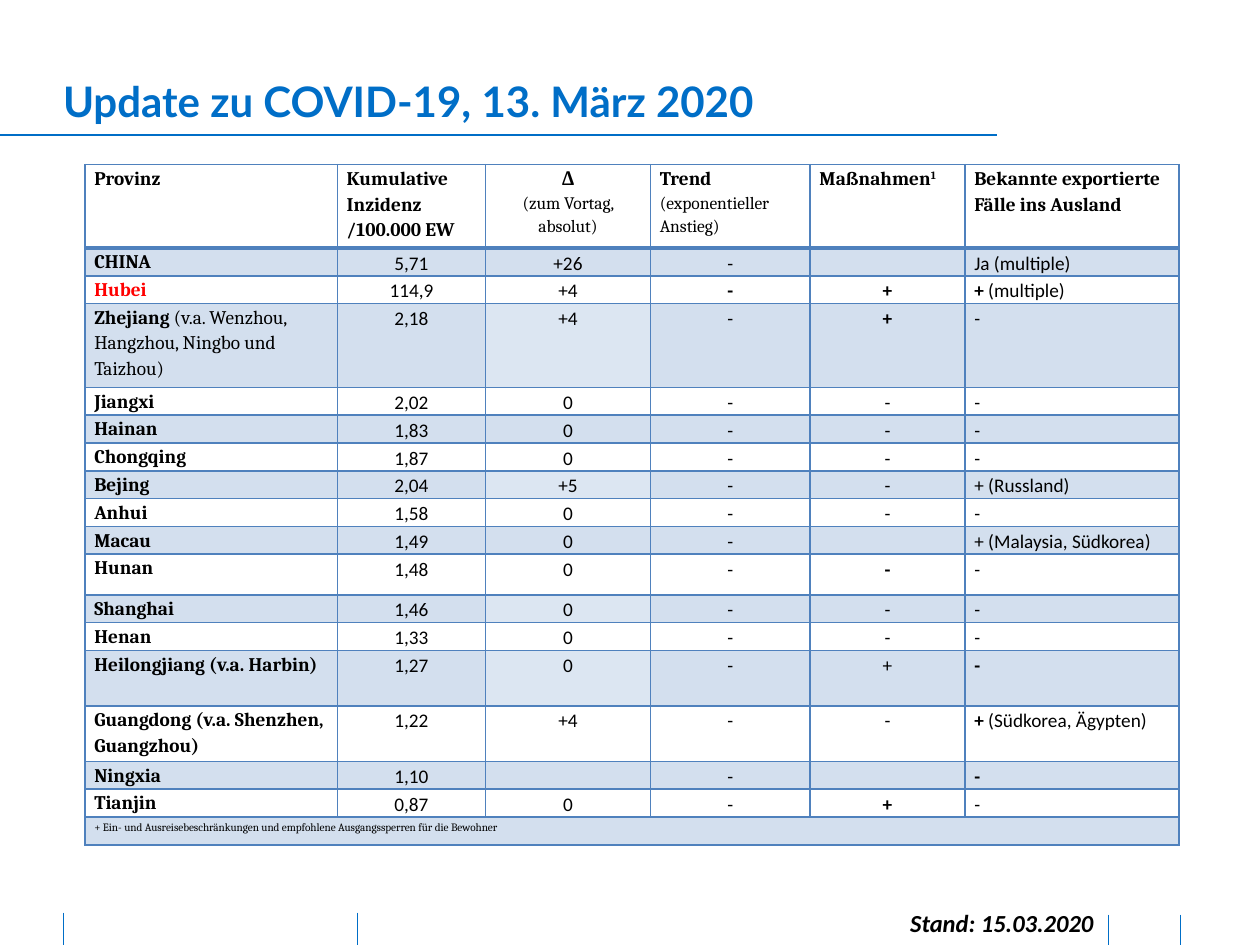
from lxml import etree
from pptx import Presentation
from pptx.dml.color import RGBColor
from pptx.enum import shapes, text
from pptx.oxml.ns import qn
from pptx.util import Cm, Pt

COLORS = {"blue": "006EC7", "border": "4F81BD", "band": "D3DFEE", "light": "DCE6F2",
          "black": "000000", "red": "FF0000"}
LEFT, CENTER, RIGHT = text.PP_ALIGN.LEFT, text.PP_ALIGN.CENTER, text.PP_ALIGN.RIGHT

# Content: *bold*, a leading ^ marks superscript, \n starts a new paragraph
TITLE = "*Update zu COVID-19, 13. März 2020*"
STATUS = "*Stand: 15.03.2020*"
HEADER = ["*Provinz*", "*Kumulative Inzidenz /100.000 EW*", "*Δ*\n(zum Vortag, absolut)",
          "*Trend*\n(exponentieller Anstieg)", "*Maßnahmen**^1*",
          "*Bekannte exportierte Fälle ins Ausland*"]
PROVINCES = [
    ["*CHINA*", "5,71", "+26", "-", "", "Ja (multiple)"],
    ["*Hubei*", "114,9", "+4", "*-*", "*+*", "*+* (multiple)"],
    ["*Zhejiang* (v.a. Wenzhou, Hangzhou, Ningbo und Taizhou)", "2,18", "+4", "-", "*+*", "-"],
    ["*Jiangxi*", "2,02", "0", "-", "-", "-"],
    ["*Hainan*", "1,83", "0", "-", "-", "-"],
    ["*Chongqing*", "1,87", "0", "-", "-", "-"],
    ["*Bejing*", "2,04", "+5", "-", "-", "+ (Russland)"],
    ["*Anhui*", "1,58", "0", "-", "-", "-"],
    ["*Macau*", "1,49", "0", "-", "", "+ (Malaysia, Südkorea)"],
    ["*Hunan*", "1,48", "0", "-", "*-*", "-"],
    ["*Shanghai*", "1,46", "0", "-", "-", "-"],
    ["*Henan*", "1,33", "0", "-", "-", "-"],
    ["*Heilongjiang (v.a. Harbin)*", "1,27", "0", "-", "+", "*-*"],
    ["*Guangdong (v.a. Shenzhen, Guangzhou)*", "1,22", "+4", "-", "-", "*+* (Südkorea, Ägypten)"],
    ["*Ningxia*", "1,10", "", "-", "", "*-*"],
    ["*Tianjin*", "0,87", "0", "-", "*+*", "-"],
]
FOOTNOTE = "^+ Ein- und Ausreisebeschränkungen und empfohlene Ausgangssperren für die Bewohner"

# Table layout in cm; rows not listed have the normal height
COLUMN_WIDTHS = [5.09, 2.99, 3.32, 3.22, 3.12, 4.32]
ROW_HEIGHT = 0.56
TALL_ROWS = {0: 1.68, 3: 1.69, 10: 0.82, 13: 1.12, 14: 1.12}
LIGHT_DELTA_ROWS = {3, 7, 11, 13}
HUBEI_ROW = 2

# Lines in cm: x1, y1, x2, y2, width in points
LINES = [(0, 2.72, 20.09, 2.72, 1.5)] + [
    (x, top, x, 19.05, 0.5)
    for x, top in [(1.27, 18.4), (7.21, 18.4), (22.35, 18.44), (23.8, 18.44)]]


def write(frame, content, font="Calibri", size=11, small=10, color="black",
          align=LEFT, italic=False, spacing=None):
    """Fill a text frame; paragraphs after the first use the small size."""
    frame.word_wrap = True
    for number, line in enumerate(content.split("\n")):
        paragraph = frame.add_paragraph() if number else frame.paragraphs[0]
        paragraph.alignment = align
        paragraph.line_spacing = spacing
        points = small if number else size
        for part, words in enumerate(line.split("*")):
            if not words:
                continue
            run = paragraph.add_run()
            run.text = words.removeprefix("^")
            run.font.name, run.font.size = font, Pt(points)
            run.font.bold, run.font.italic = part % 2 == 1, italic
            run.font.color.rgb = RGBColor.from_string(COLORS[color])
            if words.startswith("^"):
                run.font._element.set("baseline", "30000")
        if not line:  # keeps an empty cell from stretching its row
            etree.SubElement(paragraph._p, qn("a:endParaRPr"), sz=str(points * 100))


def set_borders(cell, top=1, bottom=1):
    properties = cell._tc.get_or_add_tcPr()
    widths = {"a:lnL": 1, "a:lnR": 1, "a:lnT": top, "a:lnB": bottom}
    for position, (side, width) in enumerate(widths.items()):
        border = etree.Element(qn(side), w=str(Pt(width)))
        fill = etree.SubElement(border, qn("a:solidFill"))
        etree.SubElement(fill, qn("a:srgbClr"), val=COLORS["border"])
        properties.insert(position, border)


def add_line(slide, x1, y1, x2, y2, width):
    line = slide.shapes.add_connector(
        shapes.MSO_CONNECTOR.STRAIGHT, Cm(x1), Cm(y1), Cm(x2), Cm(y2))
    line.line.color.rgb = RGBColor.from_string(COLORS["blue"])
    line.line.width = Pt(width)
    etree.SubElement(line._element.spPr, qn("a:effectLst"))


def add_province_table(slide):
    rows = [HEADER, *PROVINCES, [FOOTNOTE] + [""] * 5]
    heights = [TALL_ROWS.get(row, ROW_HEIGHT) for row in range(len(rows))]
    table = slide.shapes.add_table(
        len(rows), len(HEADER), Cm(1.71), Cm(3.32),
        Cm(sum(COLUMN_WIDTHS)), Cm(sum(heights))).table
    table.first_row = table.horz_banding = False
    for column, width in zip(table.columns, COLUMN_WIDTHS):
        column.width = Cm(width)
    for row, height in zip(table.rows, heights):
        row.height = Cm(height)

    for row, contents in enumerate(rows):
        for column, content in enumerate(contents):
            cell = table.cell(row, column)
            cell.margin_left = cell.margin_right = Cm(0.19)
            cell.margin_top = cell.margin_bottom = 0
            centered = column == 2 if row == 0 else 1 <= column <= 4
            write(cell.text_frame, content, spacing=1.15,
                  font="Cambria" if row == 0 or column == 0 else "Calibri",
                  color="red" if (row, column) == (HUBEI_ROW, 0) else "black",
                  align=CENTER if centered else LEFT)
            if row % 2:
                light = column == 2 and row in LIGHT_DELTA_ROWS
                cell.fill.solid()
                cell.fill.fore_color.rgb = RGBColor.from_string(
                    COLORS["light" if light else "band"])
            else:
                cell.fill.background()
            set_borders(cell, top=2.25 if row == 1 else 1, bottom=2.25 if row == 0 else 1)
    last = len(rows) - 1
    table.cell(last, 0).merge(table.cell(last, len(HEADER) - 1))


def main():
    presentation = Presentation()
    presentation.slide_width, presentation.slide_height = Cm(25.4), Cm(19.05)
    slide = presentation.slides.add_slide(presentation.slide_layouts[5])

    # Title
    title = slide.shapes.title
    title.left, title.top, title.width, title.height = Cm(1.27), Cm(1.52), Cm(22.48), Cm(1.02)
    frame = title.text_frame
    frame.margin_left = frame.margin_right = frame.margin_top = frame.margin_bottom = 0
    write(frame, TITLE, font="Lato", size=24, color="blue")

    # Title rule and footer marks
    for line in LINES:
        add_line(slide, *line)

    # Status date
    status = slide.shapes.add_textbox(Cm(16.89), Cm(18.19), Cm(5.41), Cm(0.86))
    write(status.text_frame, STATUS, size=14, align=RIGHT, italic=True)

    add_province_table(slide)
    presentation.save("out.pptx")


if __name__ == "__main__":
    main()
